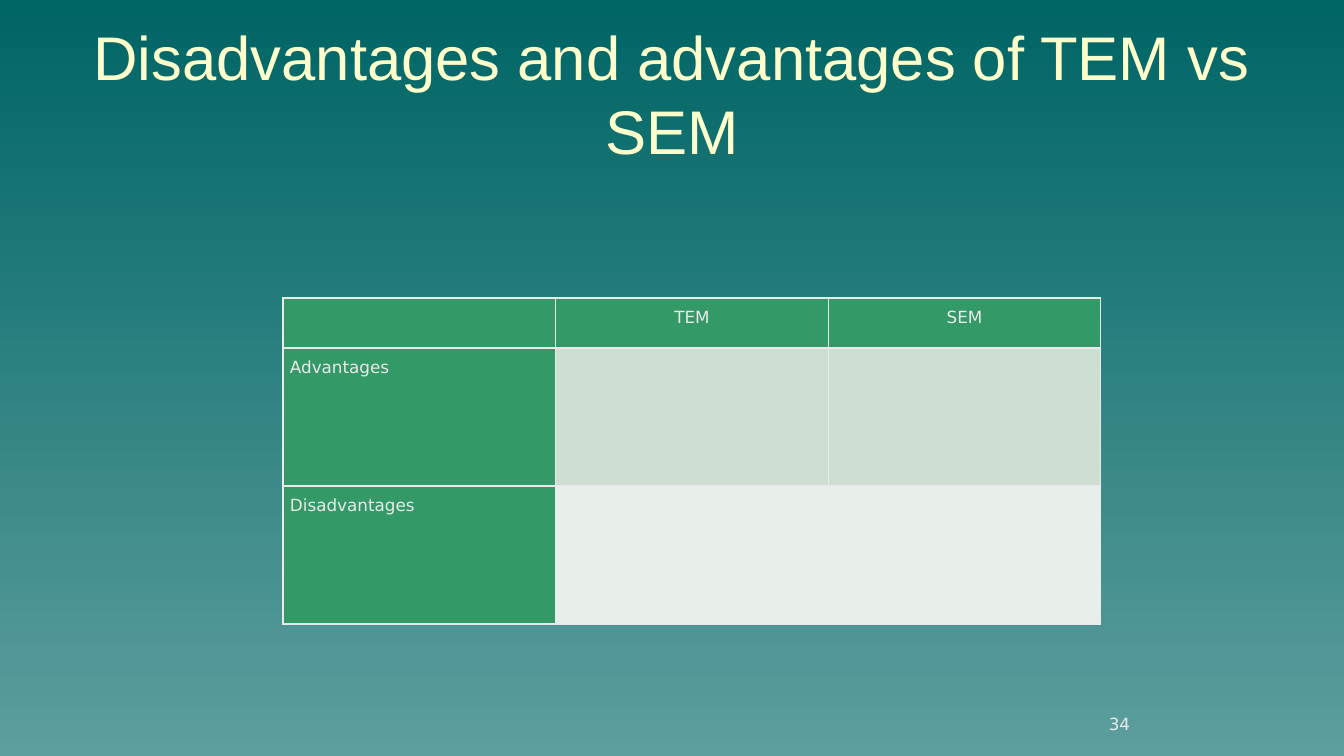
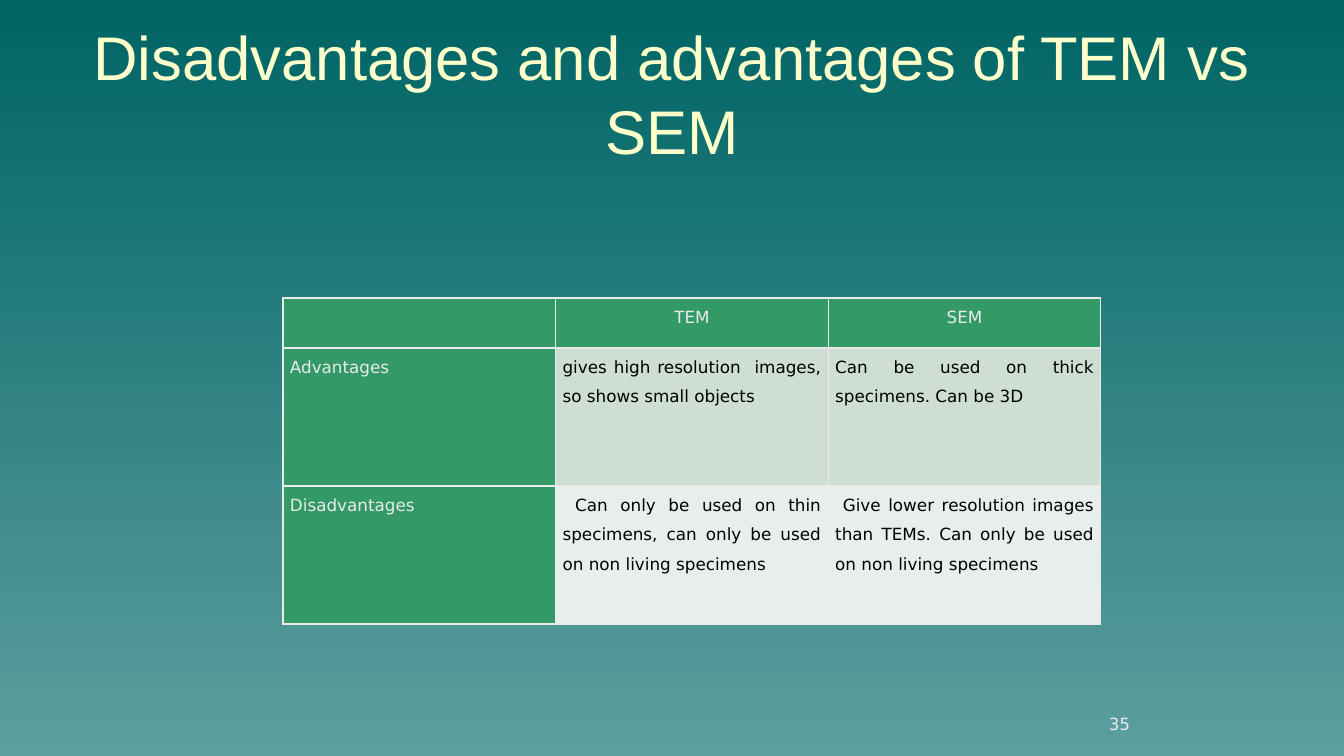
from lxml import etree
from pptx import Presentation
from pptx import util as u
from pptx.dml.color import RGBColor
from pptx.enum import text as t
from pptx.oxml.ns import qn

SCALE = 12192000 / 1344
PAGE_SIZE = (1344, 756)
TITLE_BOX = (67, 10, 1210, 166)
TABLE_BOX = (283, 298, 818, 326)
NUMBER_BOX = (1097, 707, 45, 32)
HEADER_HEIGHT = 50

PALE, CREAM, BLACK = "EAEAEA", "FFFFCC", "000000"
GREEN = "339966"
BANDS = ("CEDED3", "E8EFEA")
GRADIENT = ("006565", "5D9E9E")

TITLE = "Disadvantages and advantages of TEM vs SEM"
COLUMNS = ("", "TEM", "SEM")
EMPTY_ROWS = (("Advantages", "", ""), ("Disadvantages", "", ""))
ANSWER_ROWS = (
    (
        "Advantages",
        "gives high resolution  images, so shows small objects",
        "Can be used on thick specimens. Can be 3D",
    ),
    (
        "Disadvantages",
        " Can only be used on thin specimens, can only be used on non living specimens",
        " Give lower resolution images than TEMs. Can only be used on non living specimens",
    ),
)


def px(length):
    """Turn a length in px into EMU."""
    return u.Emu(round(length * SCALE))


def colour(value):
    """Turn a hex string into a colour."""
    return RGBColor.from_string(value)


def write(frame, words, size=12, font="DejaVu Sans", fill=PALE,
          align=t.PP_ALIGN.CENTER, spacing=None, after=None):
    """Write one formatted paragraph into a text frame."""
    para = frame.paragraphs[0]
    para.alignment = align
    para.line_spacing = spacing
    if after is not None:
        para.space_after = u.Pt(after)
    span = para.add_run()
    span.text = words
    span.font.size = u.Pt(size)
    span.font.name = font
    span.font.color.rgb = colour(fill)


def set_background(master):
    """Give every page the shared vertical gradient."""
    fill = master.background.fill
    fill.gradient()
    fill.gradient_angle = 270
    for stop, value in zip(fill.gradient_stops, GRADIENT):
        stop.color.rgb = colour(value)


def place_title(page, box):
    """Move the title placeholder into the box and fill it."""
    title = page.shapes.title
    title.left, title.top, title.width, title.height = map(px, box)
    frame = title.text_frame
    frame.word_wrap = True
    frame.auto_size = t.MSO_AUTO_SIZE.NONE
    frame.vertical_anchor = t.MSO_ANCHOR.MIDDLE
    frame.margin_left = frame.margin_right = px(10)
    frame.margin_top = frame.margin_bottom = px(6)
    write(frame, TITLE, size=44, font="Arial", fill=CREAM)


def add_borders(cell):
    """Draw a thin pale line on each side of a cell."""
    properties = cell._tc.get_or_add_tcPr()
    for side in ("a:lnL", "a:lnR", "a:lnT", "a:lnB"):
        line = etree.SubElement(properties, qn(side), w=str(u.Pt(1)))
        solid = etree.SubElement(line, qn("a:solidFill"))
        etree.SubElement(solid, qn("a:srgbClr"), val=PALE)


def fill_cell(cell, words, row, column):
    """Colour a cell and write its words by its place in the table."""
    heading = row == 0 or column == 0
    add_borders(cell)
    cell.fill.solid()
    cell.fill.fore_color.rgb = colour(GREEN if heading else BANDS[row - 1])
    if words:
        cell.margin_left = cell.margin_right = px(7)
        cell.margin_top = cell.margin_bottom = 0
        align = t.PP_ALIGN.CENTER if row == 0 else t.PP_ALIGN.JUSTIFY
        write(cell.text_frame, words, fill=PALE if heading else BLACK,
              align=align, spacing=1.5, after=12)


def add_comparison(page, box, body):
    """Add the comparison table inside the box."""
    rows = (COLUMNS, *body)
    table = page.shapes.add_table(len(rows), len(COLUMNS), *map(px, box)).table
    table.first_row = table.horz_banding = False
    for column in table.columns:
        column.width = px(box[2] / len(COLUMNS))
    for index, row in enumerate(table.rows):
        body_height = (box[3] - HEADER_HEIGHT) / len(body)
        row.height = px(body_height if index else HEADER_HEIGHT)
    for row, entries in enumerate(rows):
        for column, words in enumerate(entries):
            fill_cell(table.cell(row, column), words, row, column)


def add_number(page, box, number):
    """Add the page number inside the box."""
    frame = page.shapes.add_textbox(*map(px, box)).text_frame
    frame.word_wrap = False
    frame.vertical_anchor = t.MSO_ANCHOR.BOTTOM
    write(frame, str(number))


def add_page(deck, body, number):
    """Add one comparison page."""
    page = deck.slides.add_slide(deck.slide_layouts.get_by_name("Title Only"))
    place_title(page, TITLE_BOX)
    add_comparison(page, TABLE_BOX, body)
    add_number(page, NUMBER_BOX, number)


def main():
    """Build and save the deck."""
    deck = Presentation()
    deck.slide_width, deck.slide_height = map(px, PAGE_SIZE)
    set_background(deck.slide_master)
    for number, body in enumerate((EMPTY_ROWS, ANSWER_ROWS), start=34):
        add_page(deck, body, number)
    deck.save("out.pptx")


if __name__ == "__main__":
    main()
